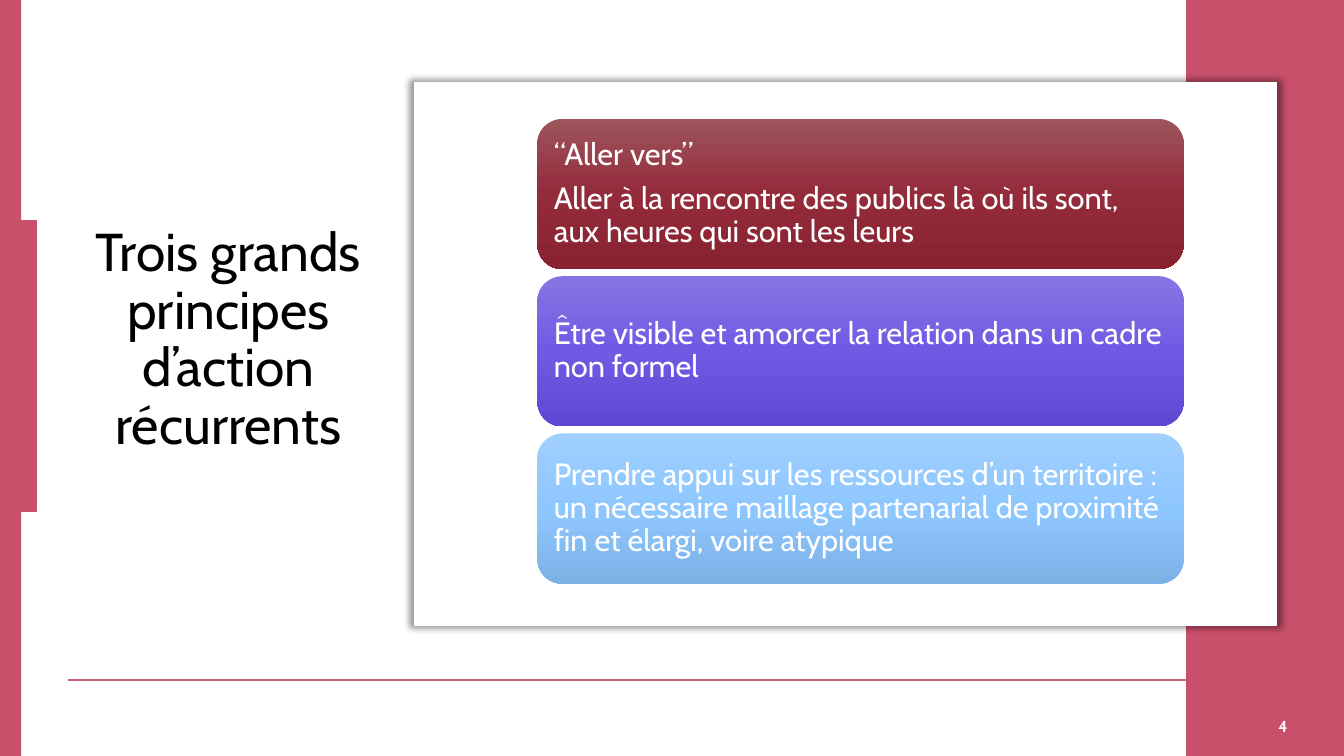
from lxml import etree
from pptx import Presentation
from pptx.dml.color import RGBColor
from pptx.enum.shapes import MSO_CONNECTOR, MSO_SHAPE
from pptx.enum.text import MSO_ANCHOR, PP_ALIGN
from pptx.oxml import parse_xml
from pptx.oxml.ns import nsdecls, qn
from pptx.util import Inches, Pt

COLORS = {"rose": "C9506B", "rule": "C96372", "white": "FFFFFF", "black": "000000"}
FONT = "Cabin"
PRINCIPLES = [
    (["“Aller vers”",
      "Aller à la rencontre des publics là où ils sont, aux heures qui sont les leurs"],
     ["9D555C", "942B3B", "882231"]),
    (["Être visible et amorcer la relation dans un cadre non formel"],
     ["8575E3", "705AE4", "5E48D2"]),
    (["Prendre appui sur les ressources d’un territoire : un nécessaire maillage "
      "partenarial de proximité fin et élargi, voire atypique"],
     ["A0CFFE", "8EC7FF", "7CB1E5"]),
]


def rgb(name):
    return RGBColor.from_string(COLORS[name])


def add_block(page, box, color, outlined=True):
    block = page.shapes.add_shape(MSO_SHAPE.RECTANGLE, *map(Inches, box))
    block.shadow.inherit = False
    block.fill.solid()
    block.fill.fore_color.rgb = rgb(color)
    if outlined:
        block.line.color.rgb = rgb(color)
        block.line.width = Pt(1)
    else:
        block.line.fill.background()
    return block


def write(frame, lines, size, color, align, anchor, spacing=1.0, after=0, bold=False):
    frame.word_wrap = True
    frame.vertical_anchor = anchor
    for index, line in enumerate(lines):
        para = frame.paragraphs[0] if index == 0 else frame.add_paragraph()
        para.text = line
        para.alignment = align
        para.line_spacing = spacing
        para.space_after = Pt(after)
        para.font.name = FONT
        para.font.size = Pt(size)
        para.font.bold = bold
        para.font.color.rgb = rgb(color)


def add_rule(page, left, right, top):
    rule = page.shapes.add_connector(
        MSO_CONNECTOR.STRAIGHT, Inches(left), Inches(top), Inches(right), Inches(top))
    rule.line.color.rgb = rgb("rule")
    rule.line.width = Pt(1.5)
    etree.SubElement(rule._element.spPr, qn("a:effectLst"))


def add_panel(page, box):
    panel = add_block(page, box, "white")
    effects = panel._element.spPr.find(qn("a:effectLst"))
    effects.append(parse_xml(
        f'<a:outerShdw {nsdecls("a")} blurRad="{Pt(5)}" dist="0" dir="0" '
        'sx="101000" sy="101000" algn="ctr" rotWithShape="0">'
        f'<a:srgbClr val="{COLORS["black"]}"><a:alpha val="40000"/></a:srgbClr>'
        '</a:outerShdw>'))


def add_backdrop(page, width, height):
    add_rule(page, 0.67, 12.67, 6.75)
    add_block(page, (0, 0, 0.21, height), "rose", outlined=False)
    add_block(page, (width - 1.56, 0, 1.56, height), "rose")
    add_panel(page, (4.11, 0.82, 8.55, 5.38))


def add_title(page, box, title):
    left, top, width, height = box
    add_block(page, (0, top, 0.36, height), "rose")
    frame = page.shapes.add_textbox(*map(Inches, box)).text_frame
    write(frame, [title], 38, "black", PP_ALIGN.CENTER, MSO_ANCHOR.TOP, spacing=0.9)


def add_page_number(page, box, number):
    frame = page.shapes.add_textbox(*map(Inches, box)).text_frame
    write(frame, [number], 11.3, "white", PP_ALIGN.CENTER, MSO_ANCHOR.BOTTOM,
          after=6, bold=True)


def add_card(page, box, lines, shades):
    card = page.shapes.add_shape(MSO_SHAPE.ROUNDED_RECTANGLE, *map(Inches, box))
    card.shadow.inherit = False
    card.line.fill.background()
    stops = "".join(
        f'<a:gs pos="{index * 50000}"><a:srgbClr val="{shade}"/></a:gs>'
        for index, shade in enumerate(shades))
    card._element.spPr.find(qn("a:prstGeom")).addnext(parse_xml(
        f'<a:gradFill {nsdecls("a")} rotWithShape="1"><a:gsLst>{stops}</a:gsLst>'
        '<a:lin ang="5400000" scaled="0"/></a:gradFill>'))
    frame = card.text_frame
    frame.margin_left = frame.margin_right = Inches(0.09)
    frame.margin_top = frame.margin_bottom = Inches(0.09)
    write(frame, lines, 22, "white", PP_ALIGN.LEFT, MSO_ANCHOR.MIDDLE,
          spacing=0.9, after=7.7)


def add_principles(page, box, gap=0.07):
    left, top, width, height = box
    count = len(PRINCIPLES)
    card_height = (height - gap * (count - 1)) / count
    for index, (lines, shades) in enumerate(PRINCIPLES):
        card_top = top + index * (card_height + gap)
        add_card(page, (left, card_top, width, card_height), lines, shades)


def main():
    width, height = 13.33, 7.5
    deck = Presentation()
    deck.slide_width, deck.slide_height = Inches(width), Inches(height)
    page = deck.slides.add_slide(deck.slide_layouts[6])
    add_backdrop(page, width, height)
    add_title(page, (0.64, 2.19, 3.25, 2.88), "Trois grands principes d’action récurrents")
    add_page_number(page, (12.12, 6.95, 1.21, 0.4), "4")
    add_principles(page, (5.33, 1.18, 6.41, 4.61))
    deck.save("out.pptx")


if __name__ == "__main__":
    main()
